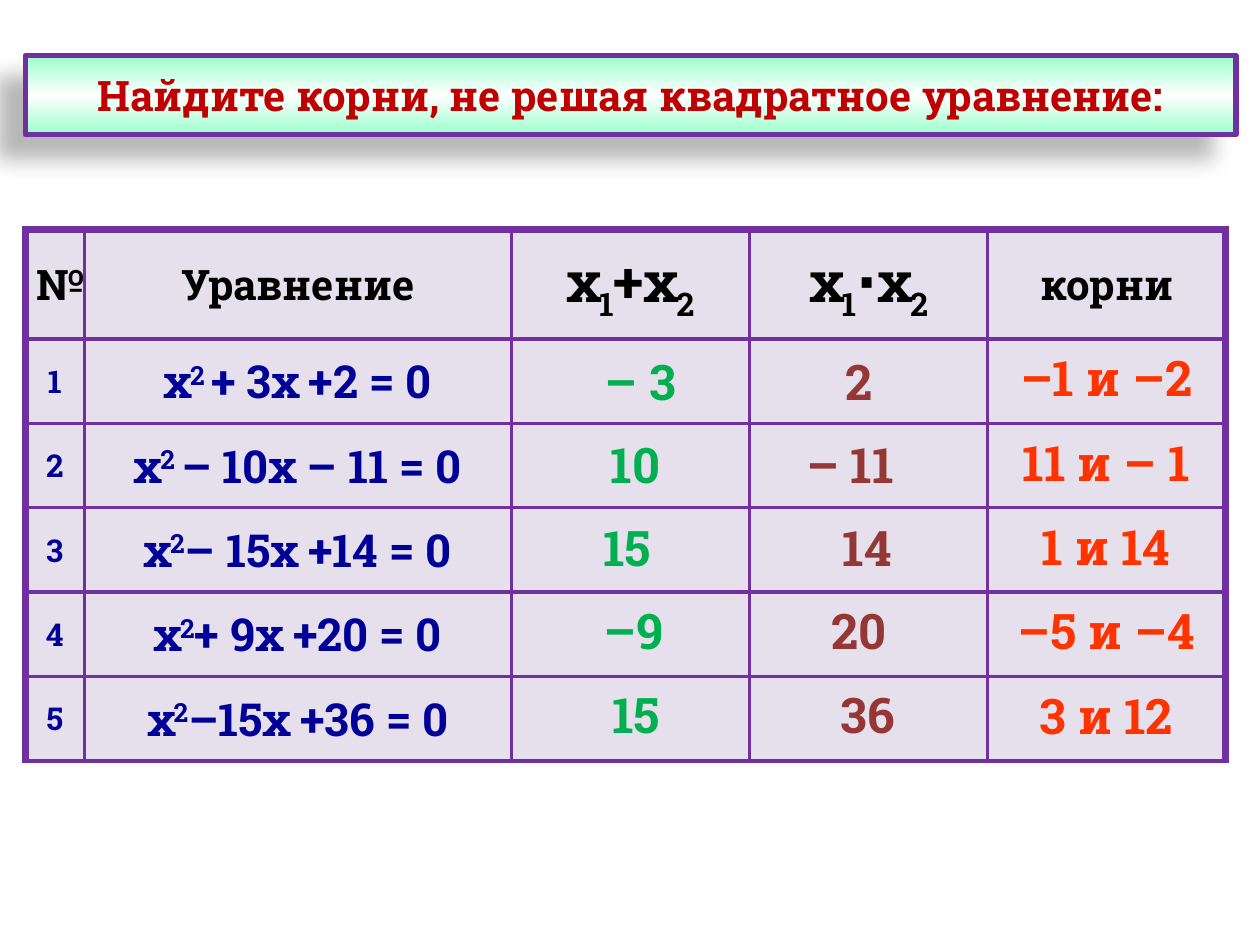
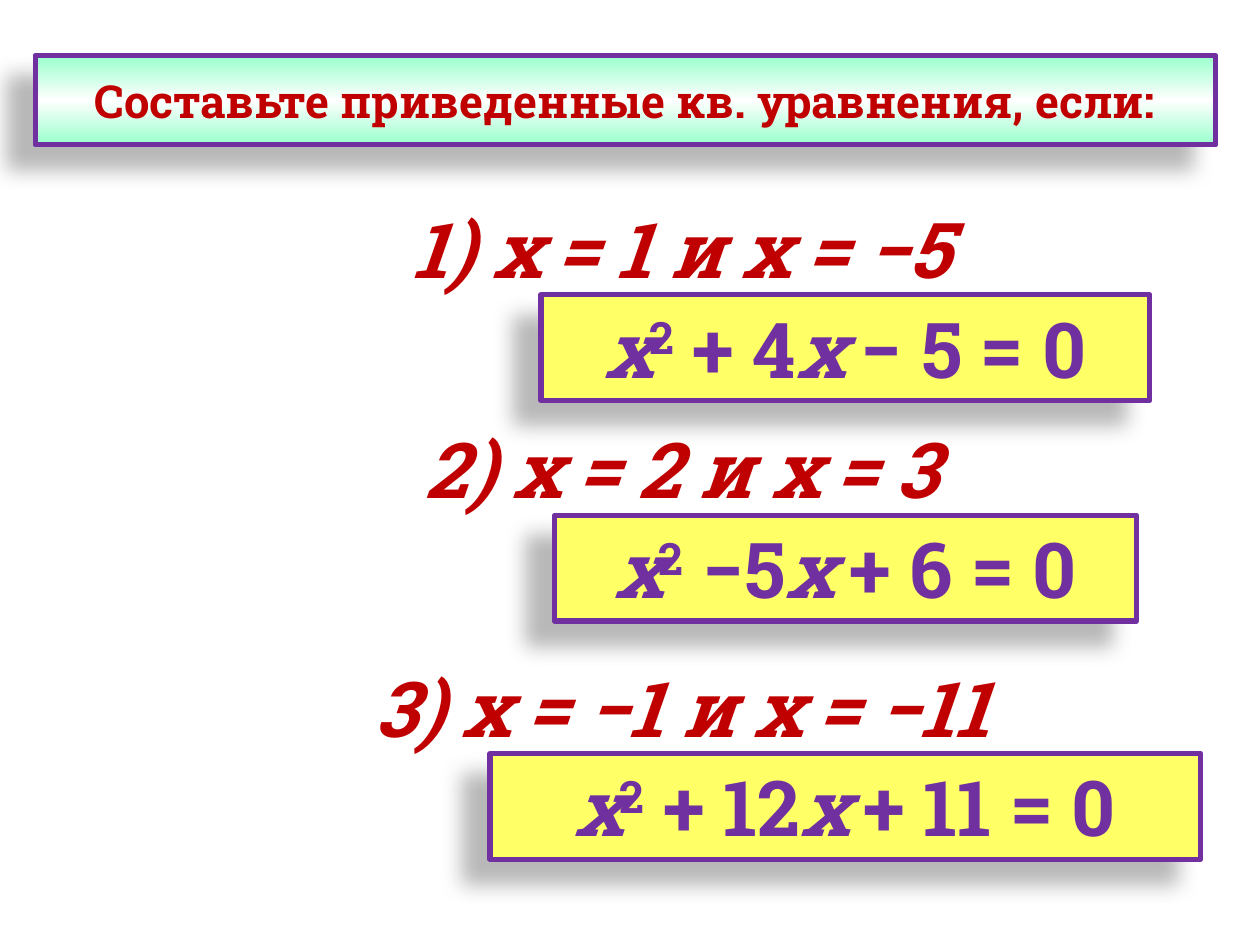
from copy import deepcopy

from lxml.etree import SubElement
from pptx import Presentation
from pptx.dml.color import RGBColor
from pptx.enum.shapes import MSO_SHAPE
from pptx.enum.text import MSO_ANCHOR, MSO_AUTO_SIZE, PP_ALIGN
from pptx.oxml.ns import qn
from pptx.util import Inches, Pt

FONT = "Roboto Slab"
PURPLE, RED, BLACK, NAVY = "7030A0", "C00000", "000000", "000099"
MINT, WHITE, YELLOW, LILAC = "99FFCC", "FFFFFF", "FFFF66", "E6E0EC"
GREEN, BROWN, ORANGE = "00B050", "953735", "FF3300"
BASELINES = {"^": "30000", "_": "-25000"}
LEFT, CENTER = PP_ALIGN.LEFT, PP_ALIGN.CENTER

COLUMN_WIDTHS = [0.47, 3.39, 1.89, 1.89, 1.89]
ROW_HEIGHTS = [0.87] + [0.67] * 5
HEADINGS = [
    ([("№", "")], 24),
    ([("Уравнение", "")], 24),
    ([("х", ""), ("1", "_"), ("+х", ""), ("2", "_")], 32),
    ([("х", ""), ("1", "_"), ("⋅х", ""), ("2", "_")], 32),
    ([("корни", "")], 24),
]
EQUATIONS = [
    ("2 ", "+ 3х +2 = 0"),
    ("2 ", "– 10х – 11 = 0"),
    ("2", "– 15х +14 = 0"),
    ("2", "+ 9х +20 = 0"),
    ("2", "–15х +36 = 0"),
]
SUMS = [("– 3", 4.7, 0.92), ("10", 4.75, 0.82), ("15", 4.69, 0.87),
        ("–9", 4.69, 0.68), ("15", 4.76, 0.79)]
PRODUCTS = [("2", 6.61, 0.55, LEFT), ("– 11", 6.3, 1.18, LEFT),
            ("14", 6.51, 0.75, CENTER), ("20", 6.5, 0.78, LEFT),
            ("36", 6.51, 0.75, CENTER)]
ROOTS = [("–1 и –2", 2.05), ("11 и – 1", 1.89), ("1 и 14", 1.89),
         ("–5 и –4", 1.65), ("3 и 12", 1.67)]
TASKS = [
    (1.55, "1) х = 1 и х = −5", 5.38, 4.83, " + 4", "х", " − 5 = 0"),
    (3.3, "2) х = 2 и х = 3", 5.01, 4.62, " −5", "х", " + 6 = 0"),
    (5.19, "3) х = −1 и х = −11", 6.17, 5.64, " + 12", "х ", "+ 11 = 0"),
]


def rgb(hex_colour):
    """Turn a hex string into a colour."""
    return RGBColor.from_string(hex_colour)


def write(frame, runs, size, colour, align=CENTER):
    """Fill the first paragraph with (text, marks) runs: i italic, ^ raised, _ lowered."""
    paragraph = frame.paragraphs[0]
    paragraph.alignment = align
    for text, marks in runs:
        run = paragraph.add_run()
        run.text = text
        run.font.name = FONT
        run.font.size = Pt(size)
        run.font.bold = True
        run.font.italic = "i" in marks
        run.font.color.rgb = rgb(colour)
        for mark in marks:
            if mark in BASELINES:
                run._r.get_or_add_rPr().set("baseline", BASELINES[mark])


def add_label(slide, box, runs, size, colour, align=CENTER, wrap=True):
    """Add a text box that grows with its text."""
    frame = slide.shapes.add_textbox(*map(Inches, box)).text_frame
    frame.word_wrap = wrap
    frame.auto_size = MSO_AUTO_SIZE.SHAPE_TO_FIT_TEXT
    write(frame, runs, size, colour, align)


def add_panel(slide, box):
    """Add a purple-edged rectangle with a soft shadow to the lower left."""
    panel = slide.shapes.add_shape(MSO_SHAPE.RECTANGLE, *map(Inches, box))
    panel.line.color.rgb = rgb(PURPLE)
    panel.line.width = Pt(3)
    panel.shadow.inherit = False
    effects = panel._element.spPr.find(qn("a:effectLst"))
    shadow = SubElement(effects, qn("a:outerShdw"), blurRad=str(Pt(11.8)),
                        dist=str(Pt(19.7)), dir=str(141 * 60000),
                        algn="tr", rotWithShape="0")
    tint = SubElement(shadow, qn("a:srgbClr"), val=BLACK)
    SubElement(tint, qn("a:alpha"), val="28000")
    panel.text_frame.word_wrap = False
    return panel


def add_title(slide, box, text, size):
    """Add the title band with a mint, white and mint gradient."""
    band = add_panel(slide, box)
    band.fill.gradient()
    band.fill.gradient_angle = 90
    for stop, colour in zip(band.fill.gradient_stops, (MINT, WHITE)):
        stop.color.rgb = rgb(colour)
    band.fill.gradient_stops[1].position = 0.5
    stops = band._element.spPr.find(".//" + qn("a:gsLst"))
    last = deepcopy(stops[0])
    last.set("pos", "100000")
    stops.append(last)
    band.text_frame.vertical_anchor = MSO_ANCHOR.MIDDLE
    write(band.text_frame, [(text, "")], size, RED)


def add_answer(slide, box, runs):
    """Add a yellow panel holding an equation."""
    answer = add_panel(slide, box)
    answer.fill.solid()
    answer.fill.fore_color.rgb = rgb(YELLOW)
    answer.text_frame.vertical_anchor = MSO_ANCHOR.TOP
    answer.text_frame.auto_size = MSO_AUTO_SIZE.SHAPE_TO_FIT_TEXT
    write(answer.text_frame, runs, 44, PURPLE)


def style_cell(cell, thick_sides):
    """Draw the purple borders of a cell, then its lilac fill."""
    properties = cell._tc.get_or_add_tcPr()
    for side in "LRTB":
        width = 4.5 if side in thick_sides else 2.25
        border = SubElement(properties, qn(f"a:ln{side}"), w=str(Pt(width)))
        SubElement(SubElement(border, qn("a:solidFill")), qn("a:srgbClr"), val=PURPLE)
    cell.fill.solid()
    cell.fill.fore_color.rgb = rgb(LILAC)
    cell.vertical_anchor = MSO_ANCHOR.MIDDLE


def add_equation_table(slide):
    """Add the table of numbered equations with empty answer columns."""
    box = (0.2, 1.82, sum(COLUMN_WIDTHS), sum(ROW_HEIGHTS))
    table = slide.shapes.add_table(len(ROW_HEIGHTS), len(COLUMN_WIDTHS),
                                   *map(Inches, box)).table
    table.first_row = table.horz_banding = False
    for column, width in zip(table.columns, COLUMN_WIDTHS):
        column.width = Inches(width)
    last_column = len(COLUMN_WIDTHS) - 1
    for row, height in enumerate(ROW_HEIGHTS):
        table.rows[row].height = Inches(height)
        for column in range(len(COLUMN_WIDTHS)):
            thick = ("T" * (row == 0) + "L" * (column == 0)
                     + "R" * (column == last_column))
            style_cell(table.cell(row, column), thick)
    for column, (runs, size) in enumerate(HEADINGS):
        write(table.cell(0, column).text_frame, runs, size, BLACK)
    for number, (power, rest) in enumerate(EQUATIONS, 1):
        write(table.cell(number, 0).text_frame, [(str(number), "")], 18, NAVY)
        write(table.cell(number, 1).text_frame,
              [("х", ""), (power, "^"), (rest, "")], 26, NAVY)


def build_roots_slide(slide):
    """Build the slide on finding roots without solving."""
    add_title(slide, (0.2, 0.44, 9.61, 0.63),
              "Найдите корни, не решая квадратное уравнение:", 24)
    add_equation_table(slide)
    for row, (text, left, width) in enumerate(SUMS):
        add_label(slide, (left, 2.74 + 0.66 * row, width, 0.57),
                  [(text, "")], 28, GREEN, LEFT)
    for row, (text, left, width, align) in enumerate(PRODUCTS):
        add_label(slide, (left, 2.74 + 0.66 * row, width, 0.57),
                  [(text, "")], 28, BROWN, align)
    for row, (text, width) in enumerate(ROOTS):
        add_label(slide, (8.78 - width / 2, 2.71 + 0.67 * row, width, 0.57),
                  [(text, "")], 28, ORANGE)


def build_equations_slide(slide):
    """Build the slide on composing equations from their roots."""
    add_title(slide, (0.28, 0.44, 9.37, 0.71),
              "Составьте приведенные кв. уравнения, если:", 26)
    for top, task, task_width, answer_width, middle, unknown, rest in TASKS:
        add_answer(slide, (6.71 - answer_width / 2, top + 0.79, answer_width, 0.84),
                   [("х", "i"), ("2", "^"), (middle, ""), (unknown, "i"), (rest, "")])
        add_label(slide, (5.41 - task_width / 2, top, task_width, 0.84),
                  [(task, "i")], 44, RED, wrap=False)


def main():
    """Build both slides and save the presentation."""
    presentation = Presentation()
    presentation.slide_width, presentation.slide_height = Inches(10), Inches(7.5)
    blank = presentation.slide_layouts[6]
    for build in (build_roots_slide, build_equations_slide):
        build(presentation.slides.add_slide(blank))
    presentation.save("out.pptx")


if __name__ == "__main__":
    main()
